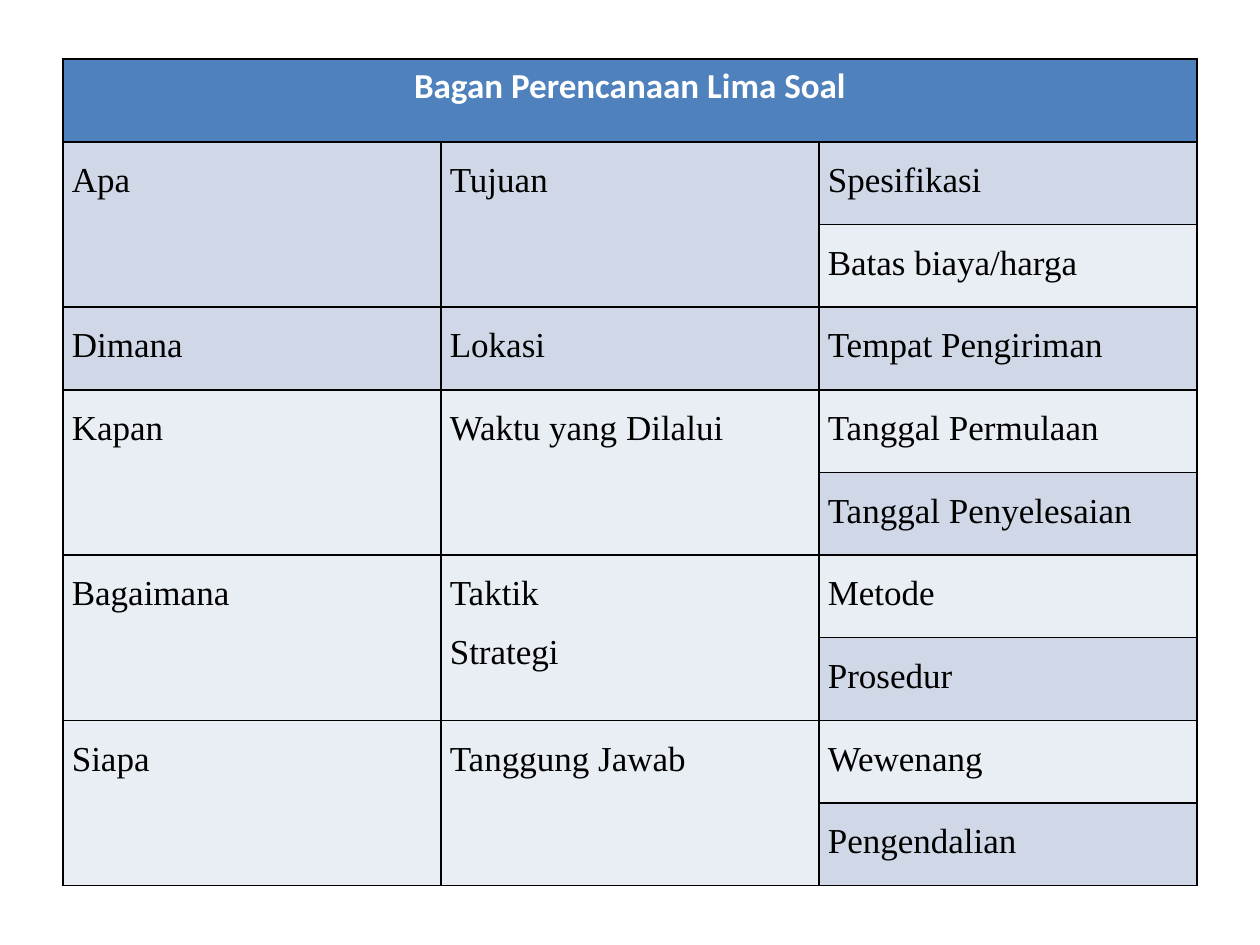
"""Build the five-question planning chart as a merged table."""
from dataclasses import dataclass

from lxml.etree import SubElement
from pptx import Presentation
from pptx.dml.color import RGBColor
from pptx.enum.text import PP_ALIGN as Align
from pptx.oxml.ns import qn
from pptx.slide import Slide
from pptx.table import Table, _Cell as Cell
from pptx.util import Inches, Pt


@dataclass(frozen=True)
class Theme:
    header_fill: str = "4F81BD"
    bands: tuple[str, str] = ("E9EDF4", "D0D8E8")
    header_text: str = "FFFFFF"
    ink: str = "000000"
    header_font: str = "Calibri"
    body_font: str = "Times New Roman"
    text_size: Pt = Pt(20)
    border_width: Pt = Pt(1)


@dataclass(frozen=True)
class Question:
    name: str
    topic: str
    details: tuple[str, ...]


THEME = Theme()
TITLE = "Bagan Perencanaan Lima Soal"
QUESTIONS = (
    Question("Apa", "Tujuan", ("Spesifikasi", "Batas biaya/harga")),
    Question("Dimana", "Lokasi", ("Tempat Pengiriman",)),
    Question("Kapan", "Waktu yang Dilalui", ("Tanggal Permulaan", "Tanggal Penyelesaian")),
    Question("Bagaimana", "Taktik\nStrategi", ("Metode", "Prosedur")),
    Question("Siapa", "Tanggung Jawab", ("Wewenang", "Pengendalian")),
)
COLUMN_COUNT = 3
ROW_COUNT = 1 + sum(len(question.details) for question in QUESTIONS)
TABLE_HEIGHT = Inches(6.56)

BODY_MARGINS = {
    "margin_left": Inches(0.07), "margin_right": Inches(0.07),
    "margin_top": 0, "margin_bottom": 0,
}
HEADER_PARAGRAPH = {"alignment": Align.CENTER}
BODY_PARAGRAPH = {"alignment": Align.JUSTIFY, "line_spacing": 1.5}
HEADER_FONT = {"name": THEME.header_font, "size": THEME.text_size, "bold": True}
BODY_FONT = {"name": THEME.body_font, "size": THEME.text_size, "bold": False}


def apply_format(target: object, values: dict) -> None:
    """Set each named attribute on the target."""
    for name, value in values.items():
        setattr(target, name, value)


def style_cell(cell: Cell, fill: str) -> None:
    """Draw all four borders and a solid fill."""
    properties = cell._tc.get_or_add_tcPr()
    for side in ("a:lnL", "a:lnR", "a:lnT", "a:lnB"):
        line = SubElement(properties, qn(side), w=str(THEME.border_width))
        line_fill = SubElement(line, qn("a:solidFill"))
        SubElement(line_fill, qn("a:srgbClr"), val=THEME.ink)
    cell.fill.solid()
    cell.fill.fore_color.rgb = RGBColor.from_string(fill)


def write_cell(cell: Cell, text: str, color: str, paragraph_format: dict, font_format: dict) -> None:
    """Write the text and format every paragraph."""
    cell.text = text
    for paragraph in cell.text_frame.paragraphs:
        apply_format(paragraph, paragraph_format)
        for run in paragraph.runs:
            apply_format(run.font, font_format)
            run.font.color.rgb = RGBColor.from_string(color)


def write_body(cell: Cell, text: str) -> None:
    """Write one body cell."""
    apply_format(cell, BODY_MARGINS)
    write_cell(cell, text, THEME.ink, BODY_PARAGRAPH, BODY_FONT)


def add_question(table: Table, top: int, question: Question) -> int:
    """Fill the rows of one question and return the next free row."""
    bottom = top + len(question.details) - 1
    for column, text in enumerate((question.name, question.topic)):
        cell = table.cell(top, column)
        if bottom > top:
            cell.merge(table.cell(bottom, column))
        write_body(cell, text)
    for row, detail in enumerate(question.details, top):
        write_body(table.cell(row, COLUMN_COUNT - 1), detail)
    return bottom + 1


def add_planning_table(slide: Slide) -> None:
    """Add the title row, the banded grid and the five questions."""
    table = slide.shapes.add_table(
        ROW_COUNT, COLUMN_COUNT, Inches(0.5), Inches(0.47), Inches(9), TABLE_HEIGHT
    ).table
    for index, row in enumerate(table.rows):
        row.height = TABLE_HEIGHT // ROW_COUNT
        for cell in row.cells:
            style_cell(cell, THEME.bands[index % 2] if index else THEME.header_fill)
    header = table.cell(0, 0)
    header.merge(table.cell(0, COLUMN_COUNT - 1))
    write_cell(header, TITLE, THEME.header_text, HEADER_PARAGRAPH, HEADER_FONT)
    next_row = 1
    for question in QUESTIONS:
        next_row = add_question(table, next_row, question)


def main() -> None:
    """Create and save the presentation."""
    presentation = Presentation()
    apply_format(presentation, {"slide_width": Inches(10), "slide_height": Inches(7.5)})
    slide = presentation.slides.add_slide(presentation.slide_layouts[6])
    add_planning_table(slide)
    presentation.save("out.pptx")


if __name__ == "__main__":
    main()
